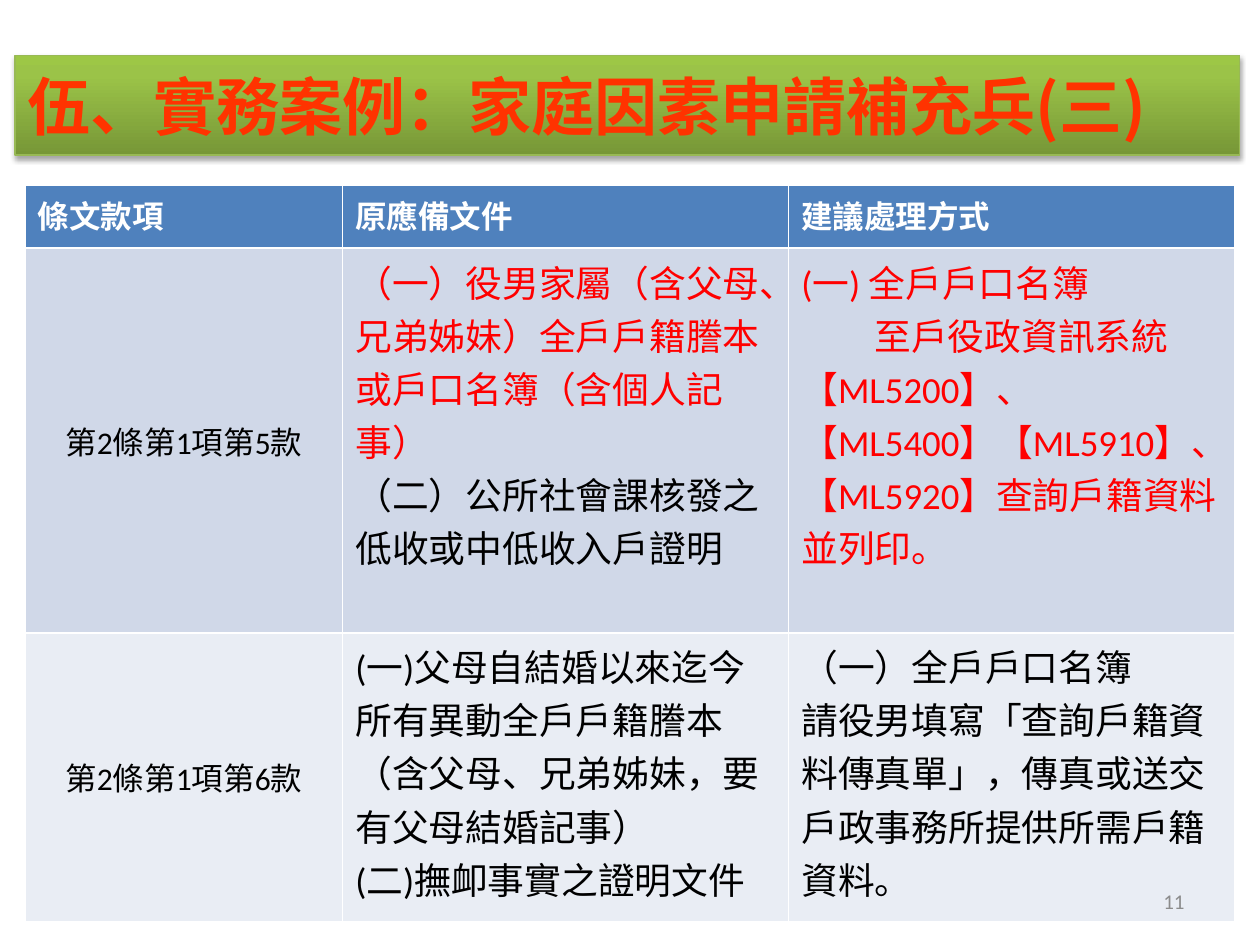
from lxml.etree import SubElement
from pptx import Presentation
from pptx.dml.color import RGBColor
from pptx.enum.text import MSO_ANCHOR, MSO_AUTO_SIZE, PP_ALIGN
from pptx.oxml import parse_xml
from pptx.oxml.ns import nsdecls, qn
from pptx.util import Inches, Pt

TITLE = "伍、實務案例：家庭因素申請補充兵(三)"
PAGE_NUMBER = "11"
HEADERS = ["條文款項", "原應備文件", "建議處理方式"]
RED, BLACK, WHITE = "FF0000", "000000", "FFFFFF"

# Each case: article, required documents, suggested handling.
# Each paragraph: text, colour, first-line indent in inches.
CASES = [
    (
        "第2條第1項第5款",
        [
            ("（一）役男家屬（含父母、兄弟姊妹）全戶戶籍謄本或戶口名簿（含個人記事）", RED, 0),
            ("（二）公所社會課核發之低收或中低收入戶證明", BLACK, 0),
        ],
        [
            ("(一) 全戶戶口名簿", RED, 0),
            ("至戶役政資訊系統【ML5200】、【ML5400】【ML5910】、【ML5920】查詢戶籍資料並列印。", RED, 0.58),
        ],
    ),
    (
        "第2條第1項第6款",
        [
            ("(一)父母自結婚以來迄今所有異動全戶戶籍謄本（含父母、兄弟姊妹，要有父母結婚記事）", BLACK, 0),
            ("(二)撫卹事實之證明文件", BLACK, 0),
        ],
        [
            ("（一）全戶戶口名簿", BLACK, 0),
            ("請役男填寫「查詢戶籍資料傳真單」，傳真或送交戶政事務所提供所需戶籍資料。", BLACK, 0),
        ],
    ),
]
COLUMN_WIDTHS = [2.52, 3.54, 3.54]
ROW_HEIGHTS = [0.5, 2.96, 2.29]
HEADER_FILL = "4F81BD"
BAND_FILLS = ["D0D8E8", "E9EDF4"]
TITLE_STOPS = [(0, "779737"), (80, "9BC348"), (100, "9DC746")]


def color(hex_text):
    return RGBColor.from_string(hex_text)


def write(frame, text, size=18, hex_color=BLACK, bold=False, font="Calibri",
          align=PP_ALIGN.LEFT, indent=0):
    """Fill the empty first paragraph of the frame, or add a new one."""
    para = frame.paragraphs[0]
    if para.runs:
        para = frame.add_paragraph()
    para.alignment = align
    if indent:
        para._p.get_or_add_pPr().set("indent", str(Inches(indent)))
    span = para.add_run()
    span.text = text
    span.font.size = Pt(size)
    span.font.bold = bold
    span.font.name = font
    span.font.color.rgb = color(hex_color)
    return span


def style_title_bar(title):
    """Give the title a vertical gradient, a thin line and a soft shadow."""
    title.line.color.rgb = color("98B955")
    title.line.width = Pt(0.75)
    stops = "".join(
        f'<a:gs pos="{position * 1000}"><a:srgbClr val="{value}"/></a:gs>'
        for position, value in TITLE_STOPS
    )
    gradient = parse_xml(
        f'<a:gradFill {nsdecls("a")} rotWithShape="1"><a:gsLst>{stops}</a:gsLst>'
        '<a:lin ang="16200000" scaled="0"/></a:gradFill>'
    )
    shadow = parse_xml(
        f'<a:effectLst {nsdecls("a")}><a:outerShdw blurRad="{Pt(3.1)}" dist="{Pt(1.8)}" '
        'dir="5400000" rotWithShape="0"><a:srgbClr val="000000"><a:alpha val="35000"/>'
        "</a:srgbClr></a:outerShdw></a:effectLst>"
    )
    properties = title.element.spPr
    properties.find(qn("a:ln")).addprevious(gradient)
    properties.append(shadow)


def add_title(page):
    title = page.shapes.title
    title.left, title.top = Inches(0.12), Inches(0.44)
    title.width, title.height = Inches(9.72), Inches(0.79)
    style_title_bar(title)
    frame = title.text_frame
    frame.auto_size = MSO_AUTO_SIZE.NONE
    frame.vertical_anchor = MSO_ANCHOR.MIDDLE
    font = "Noto Sans CJK SC"
    span = write(frame, TITLE, size=36, hex_color="FF3300", bold=True, font=font)
    SubElement(span.font._element, qn("a:ea")).set("typeface", font)


def fill_cell(cell, hex_color):
    cell.fill.solid()
    cell.fill.fore_color.rgb = color(hex_color)


def add_case_table(page):
    table = page.shapes.add_table(
        len(ROW_HEIGHTS), len(COLUMN_WIDTHS), Inches(0.2), Inches(1.47),
        Inches(sum(COLUMN_WIDTHS)), Inches(sum(ROW_HEIGHTS)),
    ).table
    for column, width in zip(table.columns, COLUMN_WIDTHS):
        column.width = Inches(width)
    for row, height in zip(table.rows, ROW_HEIGHTS):
        row.height = Inches(height)

    for cell, header in zip(table.rows[0].cells, HEADERS):
        fill_cell(cell, HEADER_FILL)
        write(cell.text_frame, header, hex_color=WHITE, bold=True)

    for index, (article, *details) in enumerate(CASES):
        cells = list(table.rows[index + 1].cells)
        for cell in cells:
            fill_cell(cell, BAND_FILLS[index % 2])
        cells[0].vertical_anchor = MSO_ANCHOR.MIDDLE
        write(cells[0].text_frame, article, align=PP_ALIGN.CENTER)
        for cell, paragraphs in zip(cells[1:], details):
            for text, hex_color, indent in paragraphs:
                write(cell.text_frame, text, size=21, hex_color=hex_color, indent=indent)


def add_page_number(page):
    box = page.shapes.add_textbox(Inches(7.17), Inches(6.95), Inches(2.33), Inches(0.4))
    frame = box.text_frame
    frame.word_wrap = True
    frame.vertical_anchor = MSO_ANCHOR.MIDDLE
    write(frame, PAGE_NUMBER, size=12, hex_color="8C8C8C", align=PP_ALIGN.RIGHT)


def main():
    deck = Presentation()
    deck.slide_width, deck.slide_height = Inches(10), Inches(7.5)
    page = deck.slides.add_slide(deck.slide_layouts[5])
    add_title(page)
    add_case_table(page)
    add_page_number(page)
    deck.save("out.pptx")


if __name__ == "__main__":
    main()
